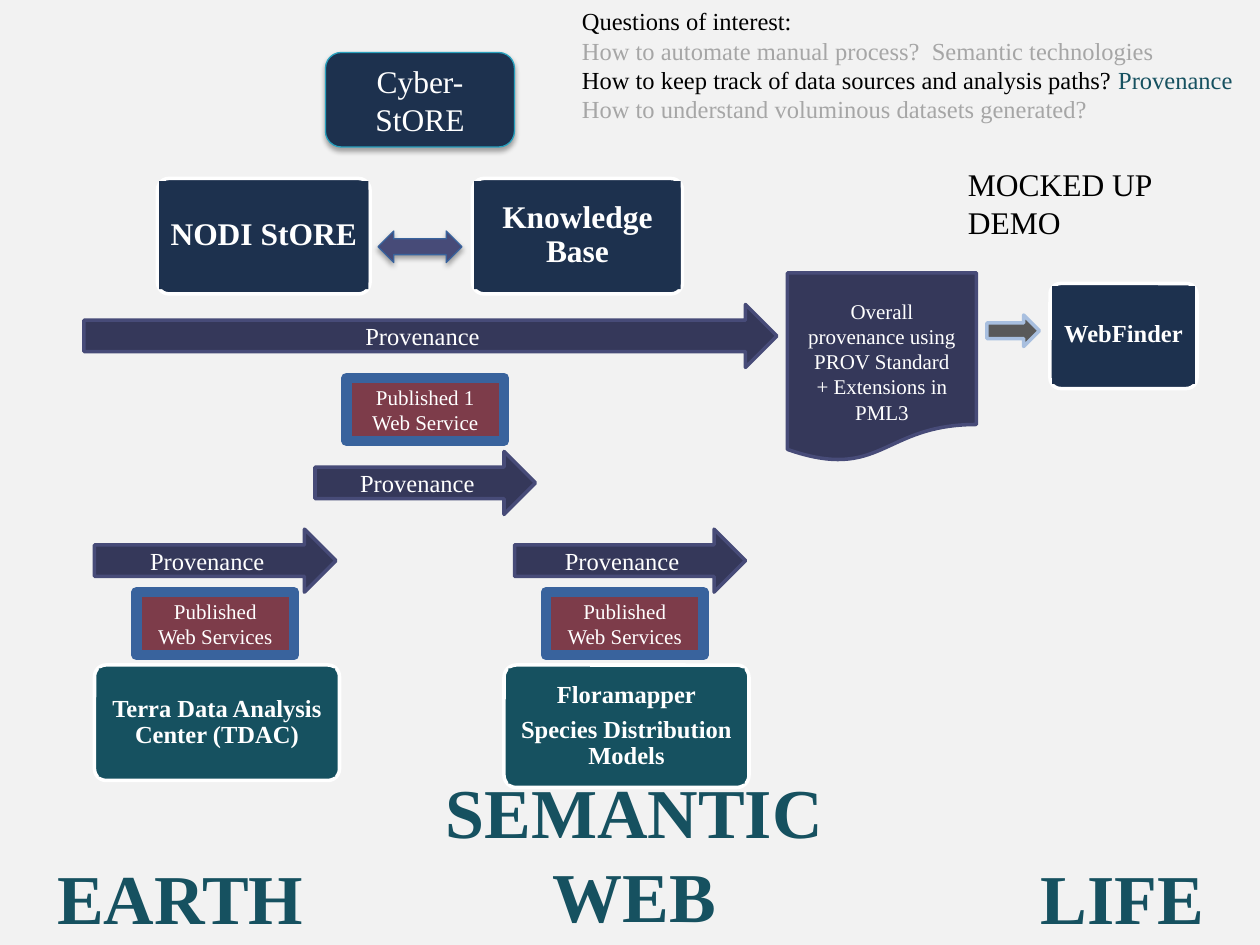
from lxml.etree import SubElement
from pptx import Presentation
from pptx.dml.color import RGBColor
from pptx.enum.shapes import MSO_SHAPE as KIND
from pptx.enum.text import MSO_ANCHOR, PP_ALIGN
from pptx.oxml.ns import qn
from pptx.util import Pt

WHITE = RGBColor(0xFF, 0xFF, 0xFF)
BLACK = RGBColor(0, 0, 0)
PALE = RGBColor(0xF2, 0xF2, 0xF2)
FADED = RGBColor(0xA6, 0xA6, 0xA6)
GREY = RGBColor(0x59, 0x59, 0x59)
TEAL = RGBColor(0x16, 0x51, 0x60)
NAVY = RGBColor(0x1D, 0x31, 0x4E)
INDIGO = RGBColor(0x35, 0x38, 0x5A)
VIOLET = RGBColor(0x47, 0x4B, 0x78)
WINE = RGBColor(0x7D, 0x3C, 0x4A)
BLUE = RGBColor(0x39, 0x63, 0x9D)
SKY = RGBColor(0xA8, 0xBF, 0xDF)
CYAN = RGBColor(0x28, 0xA1, 0xBE)
FONT = "Times New Roman"

# Boxes are left, top, width, height in points.
SERVICES = [
    ((312, 338.4, 90, 36), "Published\nWeb Services"),
    ((78, 338.4, 90, 36), "Published\nWeb Services"),
    ((198, 216, 90, 36), "Published 1\nWeb Service"),
]
# Box, text, size, fill, side gap, top gap, text margin
PANELS = [
    ((54, 380, 140, 66), "Terra Data Analysis Center (TDAC)", 14, TEAL, 2.5, 2, 4.3),
    ((288, 380, 140, 70), "Floramapper\nSpecies Distribution Models", 14, TEAL, 2.5, 2, 4.3),
    ((90, 102, 121.5, 66), "NODI StORE", 18, NAVY, 1, 1.5, 4.3),
    ((270, 102, 120, 66), "Knowledge Base", 18, NAVY, 1, 1.5, 4.3),
    ((600, 162, 84, 60), "WebFinder", 14, NAVY, 1.2, 1.5, 5),
]
# Left, top, width
TRAILS = [(54, 302.4, 138), (294, 302.4, 132), (180, 258, 126), (48, 174, 396)]
STORE = "Overall provenance using\nPROV Standard\n+ Extensions in PML3"
QUESTIONS = [
    [("Questions of interest:", BLACK)],
    [("How to automate manual process?  Semantic technologies", FADED)],
    [("How to keep track of data sources and analysis paths? ", BLACK),
     ("Provenance", TEAL)],
    [("How to understand voluminous datasets generated?", FADED)],
]
TITLES = [
    ((24.5, 485, 157, 55.5), "EARTH"),
    ((587, 485, 108.5, 55.5), "LIFE"),
    ((246, 435.6, 232.8, 104.4), "SEMANTIC\nWEB"),
]


def style(run, size, color, bold=False):
    font = run.font
    font.name, font.size, font.bold = FONT, Pt(size), bold
    font.color.rgb = color


def write(frame, text, size, color=WHITE, bold=False, align=PP_ALIGN.CENTER):
    frame.text = text
    for para in frame.paragraphs:
        para.alignment = align
        for run in para.runs:
            style(run, size, color, bold)


def draw(kind, box, fill, line=None, width=0, text="", size=12, bold=False):
    shape = slide.shapes.add_shape(kind, *map(Pt, box))
    shape.shadow.inherit = False
    shape.fill.solid()
    shape.fill.fore_color.rgb = fill
    if line is None:
        shape.line.fill.background()
    else:
        shape.line.color.rgb = line
        shape.line.width = Pt(width)
    if text:
        frame = shape.text_frame
        frame.word_wrap = True
        frame.vertical_anchor = MSO_ANCHOR.MIDDLE
        write(frame, text, size, bold=bold)
    return shape


def panel(box, text, size, fill, side, top, margin):
    """Draw a white-edged rounded frame with a text block laid inside it."""
    draw(KIND.ROUNDED_RECTANGLE, box, fill, WHITE, 2).adjustments[0] = 0.1
    x, y, w, h = box
    inner = (x + side, y + top, w - 2 * side, h - 4.2)
    frame = draw(KIND.RECTANGLE, inner, fill, text=text, size=size, bold=True).text_frame
    frame.margin_left = frame.margin_right = Pt(margin)
    frame.margin_top = frame.margin_bottom = Pt(margin)
    for para in frame.paragraphs:
        para.line_spacing = 0.9
        para.space_after = Pt(0.35 * size)


def shade(shape):
    """Add a soft shadow below the shape."""
    effects = shape._element.spPr.find(qn("a:effectLst"))
    drop = SubElement(effects, qn("a:outerShdw"), blurRad=str(Pt(3.1)),
                      dist=str(Pt(1.8)), dir="5400000", rotWithShape="0")
    color = SubElement(drop, qn("a:srgbClr"), val="000000")
    SubElement(color, qn("a:alpha"), val="35000")


def label(box, wrap=False):
    frame = slide.shapes.add_textbox(*map(Pt, box)).text_frame
    frame.word_wrap = wrap
    return frame


deck = Presentation()
deck.slide_width, deck.slide_height = Pt(720), Pt(540)
slide = deck.slides.add_slide(deck.slide_layouts[6])
slide.background.fill.solid()
slide.background.fill.fore_color.rgb = PALE

for box, text in SERVICES:
    draw(KIND.RECTANGLE, box, WINE, BLUE, 6, text)
for item in PANELS:
    panel(*item)

shade(draw(KIND.LEFT_RIGHT_ARROW, (216, 132, 48, 18), VIOLET, BLUE, 0.75))
shade(draw(KIND.ROUNDED_RECTANGLE, (186, 30, 108, 54), NAVY, CYAN, 0.75,
           "Cyber-StORE", 18))

for x, y, w in TRAILS:
    draw(KIND.RIGHT_ARROW, (x, y, w, 36), INDIGO, VIOLET, 2, "Provenance", 14)
store = draw(KIND.FLOWCHART_DOCUMENT, (450, 156, 108, 108), INDIGO, VIOLET, 2, STORE)
store.text_frame.margin_top = Pt(18)
draw(KIND.RIGHT_ARROW, (564, 180, 30, 18), GREY, SKY, 2)

write(label((546, 90.7, 158.4, 29), True), "MOCKED UP DEMO", 18, BLACK,
      align=PP_ALIGN.LEFT)

frame = label((325.4, 0, 394.6, 75))
for i, parts in enumerate(QUESTIONS):
    para = frame.add_paragraph() if i else frame.paragraphs[0]
    for text, color in parts:
        run = para.add_run()
        run.text = text
        style(run, 14, color)

for box, text in TITLES:
    write(label(box), text, 40, TEAL, True)

deck.save("out.pptx")
